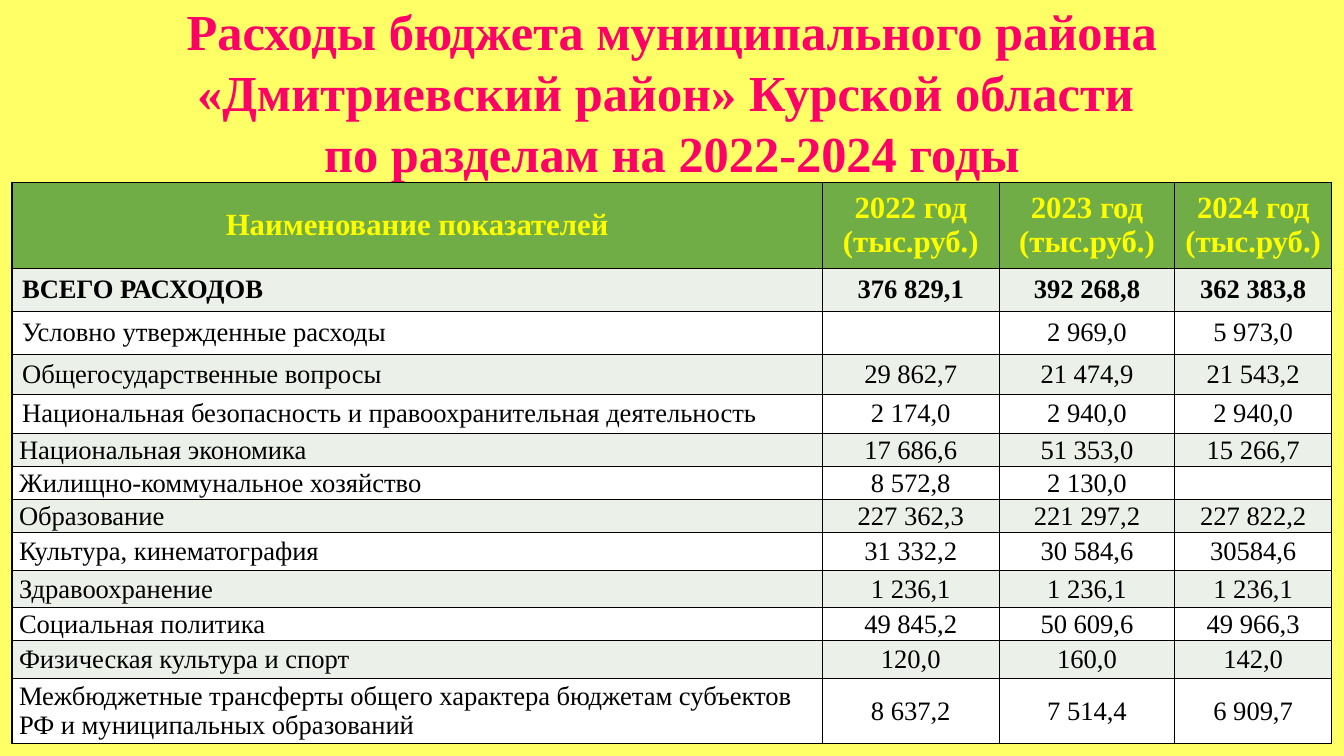
import dataclasses

import lxml.etree
import pptx
import pptx.dml.color
import pptx.enum.text
import pptx.oxml.ns
import pptx.util

Pt = pptx.util.Pt
RGB = pptx.dml.color.RGBColor
ALIGN = pptx.enum.text.PP_ALIGN
MIDDLE = pptx.enum.text.MSO_ANCHOR.MIDDLE


@dataclasses.dataclass(frozen=True)
class Theme:
    font: str = "Times New Roman"
    background: str = "FFFF66"
    title: str = "FF0066"
    header_fill: str = "70AD47"
    header_text: str = "FFFF00"
    bands: tuple[str, str] = ("EBF1E9", "FFFFFF")
    text: str = "000000"
    border: str = "000000"
    title_size: float = 36
    header_size: float = 22
    body_size: float = 19


@dataclasses.dataclass(frozen=True)
class Row:
    height: float
    label: str
    values: tuple[str, str, str]
    padded: bool = False
    bold: bool = False


THEME = Theme()
WIDE = (7.2, 3.6)
NARROW = (5, 0)
COLUMNS = (578.8, 126.4, 125.4, 112)
HEADER = Row(61.4, "Наименование показателей",
             ("2022 год (тыс.руб.)", "2023 год (тыс.руб.)", "2024 год (тыс.руб.)"))
ROWS = (
    Row(30.7, "ВСЕГО РАСХОДОВ", ("376 829,1", "392 268,8", "362 383,8"), True, True),
    Row(30.7, "Условно утвержденные расходы", ("", "2 969,0", "5 973,0"), True),
    Row(28.6, "Общегосударственные вопросы", ("29 862,7", "21 474,9", "21 543,2"), True),
    Row(27.9, "Национальная безопасность и правоохранительная деятельность",
        ("2 174,0", "2 940,0", "2 940,0"), True),
    Row(23.6, "Национальная экономика", ("17 686,6", "51 353,0", "15 266,7")),
    Row(23.6, "Жилищно-коммунальное хозяйство", ("8 572,8", "2 130,0", "")),
    Row(23.6, "Образование", ("227 362,3", "221 297,2", "227 822,2")),
    Row(27.1, "Культура, кинематография", ("31 332,2", "30 584,6", "30584,6")),
    Row(26.4, "Здравоохранение", ("1 236,1", "1 236,1", "1 236,1")),
    Row(23.6, "Социальная политика", ("49 845,2", "50 609,6", "49 966,3")),
    Row(27.1, "Физическая культура и спорт", ("120,0", "160,0", "142,0")),
    Row(46.4, "Межбюджетные трансферты общего характера бюджетам субъектов "
        "РФ и муниципальных образований", ("8 637,2", "7 514,4", "6 909,7")),
)


def set_attrs(target: object, values: dict[str, object]) -> None:
    for name, value in values.items():
        setattr(target, name, value)


def style_font(font: object, size: float, color: str, bold: bool) -> None:
    set_attrs(font, {"name": THEME.font, "size": Pt(size), "bold": bold})
    font.color.rgb = RGB.from_string(color)


def add_borders(cell: object) -> None:
    qn = pptx.oxml.ns.qn
    tc_pr = cell._tc.get_or_add_tcPr()
    for side in ("lnL", "lnR", "lnT", "lnB"):
        ln = lxml.etree.SubElement(tc_pr, qn(f"a:{side}"), w=str(Pt(1)))
        fill = lxml.etree.SubElement(ln, qn("a:solidFill"))
        lxml.etree.SubElement(fill, qn("a:srgbClr"), val=THEME.border)


def fill_cell(cell: object, text: str, fill: str, size: float, color: str,
              bold: bool, align: ALIGN, insets: tuple[float, float]) -> None:
    across, down = map(Pt, insets)
    set_attrs(cell, {"margin_left": across, "margin_right": across,
                     "margin_top": down, "margin_bottom": down,
                     "vertical_anchor": MIDDLE})
    add_borders(cell)
    cell.fill.solid()
    cell.fill.fore_color.rgb = RGB.from_string(fill)
    if text:
        p = cell.text_frame.paragraphs[0]
        p.alignment = align
        r = p.add_run()
        r.text = text
        style_font(r.font, size, color, bold)


def add_title(s: object) -> None:
    sp = s.shapes.title
    set_attrs(sp, {"left": Pt(0), "top": Pt(0), "width": Pt(960), "height": Pt(130.3)})
    tf = sp.text_frame
    set_attrs(tf, {"word_wrap": True, "vertical_anchor": MIDDLE,
                   "auto_size": pptx.enum.text.MSO_AUTO_SIZE.NONE})
    p = tf.paragraphs[0]
    p.text = ("Расходы бюджета муниципального района «Дмитриевский район» "
              "Курской области \vпо разделам на 2022-2024 годы")
    set_attrs(p, {"alignment": ALIGN.CENTER, "line_spacing": Pt(43.3)})
    for r in p.runs:
        style_font(r.font, THEME.title_size, THEME.title, True)


def add_budget_table(s: object) -> None:
    rows = (HEADER, *ROWS)
    table = s.shapes.add_table(len(rows), len(COLUMNS), Pt(8.6), Pt(130.2),
                               Pt(sum(COLUMNS)), Pt(sum(r.height for r in rows))).table
    set_attrs(table, {"first_row": False, "horz_banding": False})
    for column, width in zip(table.columns, COLUMNS):
        column.width = Pt(width)

    # Header row
    table.rows[0].height = Pt(HEADER.height)
    for j, text in enumerate((HEADER.label, *HEADER.values)):
        fill_cell(table.cell(0, j), text, THEME.header_fill, THEME.header_size,
                  THEME.header_text, True, ALIGN.CENTER, WIDE)

    # Banded data rows
    for i, row in enumerate(ROWS):
        table.rows[i + 1].height = Pt(row.height)
        for j, text in enumerate((row.label, *row.values)):
            fill_cell(table.cell(i + 1, j), text, THEME.bands[i % 2], THEME.body_size,
                      THEME.text, row.bold, ALIGN.CENTER if j else ALIGN.LEFT,
                      WIDE if row.padded and j == 0 else NARROW)


def main() -> None:
    prs = pptx.Presentation()
    set_attrs(prs, {"slide_width": Pt(960), "slide_height": Pt(540)})
    s = prs.slides.add_slide(prs.slide_layouts[5])
    s.background.fill.solid()
    s.background.fill.fore_color.rgb = RGB.from_string(THEME.background)
    add_title(s)
    add_budget_table(s)
    prs.save("out.pptx")


if __name__ == "__main__":
    main()
